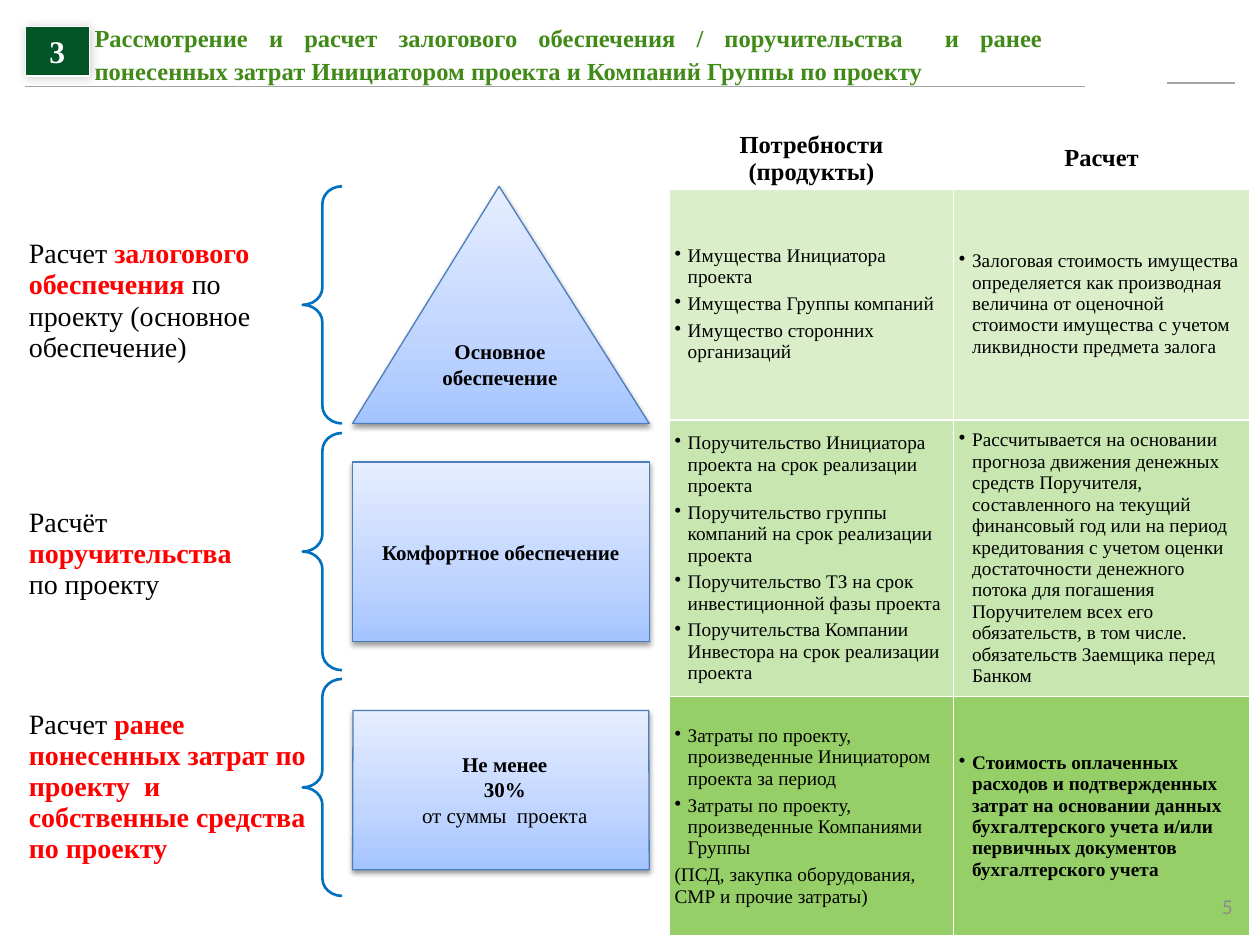
from copy import deepcopy

from pptx import Presentation
from pptx.dml.color import RGBColor
from pptx.enum.shapes import MSO_CONNECTOR, MSO_SHAPE
from pptx.enum.text import MSO_ANCHOR, MSO_AUTO_SIZE, PP_ALIGN
from pptx.oxml import parse_xml
from pptx.oxml.ns import nsdecls, qn
from pptx.oxml.xmlchemy import OxmlElement
from pptx.util import Pt

LEFT, CENTER, RIGHT, JUSTIFY = PP_ALIGN.LEFT, PP_ALIGN.CENTER, PP_ALIGN.RIGHT, PP_ALIGN.JUSTIFY
TOP, MIDDLE = MSO_ANCHOR.TOP, MSO_ANCHOR.MIDDLE
TRIANGLE, TRAPEZOID = MSO_SHAPE.ISOSCELES_TRIANGLE, MSO_SHAPE.TRAPEZOID
RECTANGLE, BRACE = MSO_SHAPE.RECTANGLE, MSO_SHAPE.LEFT_BRACE
STRAIGHT = MSO_CONNECTOR.STRAIGHT

COLORS = {
    "black": "000000", "white": "FFFFFF", "red": "FF0000", "title": "418A18",
    "badge": "005426", "rule": "A6A6A6", "brace": "0070C0", "outline": "4B7EBC",
    "number": "8C8C8C", "row1": "DAEECA", "row2": "C8E6B0", "row3": "96CE68",
}
GRADIENT = ((0, "A4C4FF"), (0.35, "BFD4FF"), (1, "E6EEFF"))
FONT = "Times New Roman"
CELL_MARGINS = (3, 0, 3, 0)
BULLET_INDENT = 7.5

TITLE = ("Рассмотрение и расчет залогового обеспечения / поручительства  и ранее "
         "понесенных затрат Инициатором проекта и Компаний Группы по проекту")
# A run wrapped in a tuple is emphasised
STAGES = [
    [["Расчет ", ("залогового обеспечения ",), "по проекту (основное обеспечение)"]],
    [["Расчёт"], [("поручительства",)], ["по проекту"]],
    [["Расчет ", ("ранее понесенных затрат по проекту  и собственные средства по проекту",)]],
]
HEADERS = ["Потребности (продукты)", "Расчет"]
NEEDS = [
    ["Имущества Инициатора проекта", "Имущества Группы компаний",
     "Имущество сторонних организаций"],
    ["Поручительство Инициатора проекта на срок реализации проекта",
     "Поручительство группы компаний на срок реализации проекта",
     "Поручительство ТЗ на срок инвестиционной фазы проекта",
     "Поручительства Компании Инвестора на срок реализации проекта"],
    ["Затраты по проекту, произведенные Инициатором проекта за период",
     "Затраты по проекту, произведенные Компаниями Группы",
     "(ПСД, закупка оборудования, СМР и прочие затраты)"],
]
CALCULATIONS = [
    "Залоговая стоимость имущества определяется как производная величина от оценочной "
    "стоимости имущества с учетом ликвидности предмета залога",
    "Рассчитывается на основании прогноза движения денежных средств Поручителя, "
    "составленного на текущий финансовый год или на период кредитования с учетом оценки "
    "достаточности денежного потока для погашения Поручителем всех его обязательств, "
    "в том числе. обязательств Заемщика перед Банком",
    "Стоимость оплаченных расходов и подтвержденных затрат на основании данных "
    "бухгалтерского учета и/или первичных документов бухгалтерского учета",
]


def rgb(name):
    return RGBColor.from_string(COLORS.get(name, name))


def points(*values):
    return [Pt(v) for v in values]


def set_margins(target, margins):
    for side, value in zip(("left", "top", "right", "bottom"), margins):
        setattr(target, f"margin_{side}", Pt(value))


def add_run(p, text, color="black", **fmt):
    r = p.add_run()
    r.text = text
    for name, value in {"name": FONT, "bold": False, **fmt}.items():
        setattr(r.font, name, value)
    r.font.color.rgb = rgb(color)


def next_paragraph(tf, first, align=LEFT):
    p = tf.paragraphs[0] if first else tf.add_paragraph()
    p.alignment = align
    return p


def set_indent(p, margin, bullet=False):
    pPr = p._p.get_or_add_pPr()
    pPr.set("marL", str(Pt(margin)))
    pPr.set("indent", str(Pt(-margin if bullet else 0)))
    if bullet:
        char = OxmlElement("a:buChar")
        char.set("char", "•")
        pPr.append(char)


def add_text(slide, box, align, anchor):
    tf = slide.shapes.add_textbox(*points(*box)).text_frame
    tf.word_wrap = True
    tf.vertical_anchor = anchor
    return tf, next_paragraph(tf, True, align)


def add_shadow(sp, blur, distance, angle, alpha):
    """Attach an outer black shadow; angle in degrees, alpha in percent."""
    sp._element.spPr.append(parse_xml(
        f'<a:effectLst {nsdecls("a")}><a:outerShdw blurRad="{Pt(blur)}" dist="{Pt(distance)}" '
        f'dir="{angle * 60000}" rotWithShape="0"><a:srgbClr val="{COLORS["black"]}">'
        f'<a:alpha val="{alpha * 1000}"/></a:srgbClr></a:outerShdw></a:effectLst>'))


def add_rule(slide, x1, x2, y):
    line = slide.shapes.add_connector(STRAIGHT, *points(x1, y, x2, y))
    line.line.color.rgb = rgb("rule")
    line.line.width = Pt(1)
    line._element.spPr.append(OxmlElement("a:effectLst"))


def add_header(slide, x, y):
    add_rule(slide, x, x + 605.5, y + 40.5)
    add_rule(slide, x + 652.5, x + 691, y + 38.5)

    title = slide.shapes.title
    title.left, title.top, title.width, title.height = points(x + 39.5, y, 542, 41.5)
    tf = title.text_frame
    tf.auto_size, tf.word_wrap, tf.vertical_anchor = MSO_AUTO_SIZE.NONE, True, MIDDLE
    set_margins(tf, (0, 0, 0, 0))
    p = next_paragraph(tf, True, JUSTIFY)
    p.line_spacing = 1.15
    add_run(p, TITLE, "title", size=Pt(14), bold=True)

    badge = slide.shapes.add_shape(RECTANGLE, *points(x, y + 6, 36.5, 28.5))
    badge.fill.solid()
    badge.fill.fore_color.rgb = rgb("badge")
    badge.line.color.rgb = rgb("white")
    badge.line.width = Pt(0.75)
    add_shadow(badge, 6, 1, 45, 20)
    p = next_paragraph(badge.text_frame, True, CENTER)
    add_run(p, "3", "white", size=Pt(18), bold=True)


def add_plain_table(slide, x, y, cols, rows):
    """Add a table without style banding and return it."""
    table = slide.shapes.add_table(
        len(rows), len(cols), *points(x, y, sum(cols), sum(rows))).table
    table.first_row = table.horz_banding = False
    for item, width in zip(table.columns, cols):
        item.width = Pt(width)
    for item, height in zip(table.rows, rows):
        item.height = Pt(height)
    for cell in table.iter_cells():
        cell.fill.background()
        cell.vertical_anchor = MIDDLE
        set_margins(cell, CELL_MARGINS)
    return table


def add_stages(slide, x, y):
    table = add_plain_table(slide, x, y, [178.5], [34.5, 139, 150, 116.5])
    for row, paragraphs in enumerate(STAGES, 1):
        tf = table.cell(row, 0).text_frame
        for i, runs in enumerate(paragraphs):
            p = next_paragraph(tf, i == 0)
            set_indent(p, BULLET_INDENT)
            for run in runs:
                strong = isinstance(run, tuple)
                add_run(p, run[0] if strong else run, "red" if strong else "black",
                        size=Pt(16), bold=strong)


def set_borders(cell, bottom):
    tcPr = cell._tc.get_or_add_tcPr()
    for i, (tag, width) in enumerate((("lnL", 1), ("lnR", 1), ("lnT", 1), ("lnB", bottom))):
        tcPr.insert(i, parse_xml(
            f'<a:{tag} {nsdecls("a")} w="{Pt(width)}"><a:solidFill>'
            f'<a:srgbClr val="{COLORS["white"]}"/></a:solidFill></a:{tag}>'))


def add_requirements(slide, x, y):
    table = add_plain_table(slide, x, y, [162.5, 169], [34, 132.5, 158, 137])
    for col, text in enumerate(HEADERS):
        cell = table.cell(0, col)
        set_borders(cell, 3)
        add_run(next_paragraph(cell.text_frame, True, CENTER), text, size=Pt(14), bold=True)
    for row, (needs, calculation) in enumerate(zip(NEEDS, CALCULATIONS), 1):
        for col, items in enumerate((needs, [calculation])):
            cell = table.cell(row, col)
            cell.fill.solid()
            cell.fill.fore_color.rgb = rgb(f"row{row}")
            cell.margin_right = Pt(6)
            set_borders(cell, 1)
            for i, text in enumerate(items):
                p = next_paragraph(cell.text_frame, i == 0)
                if not text.startswith("("):
                    set_indent(p, BULLET_INDENT, bullet=True)
                if i:
                    p.space_before = Pt(3)
                add_run(p, text, size=Pt(11), bold=row == 3 and col == 1)


def add_block(slide, kind, box, adjustment, text=None):
    sp = slide.shapes.add_shape(kind, *points(*box))
    sp.adjustments[0] = adjustment
    sp.fill.gradient()
    sp.fill.gradient_angle = 90
    gs = sp._element.spPr.find(".//" + qn("a:gs"))
    gs.addnext(deepcopy(gs))
    for stop, (position, color) in zip(sp.fill.gradient_stops, GRADIENT):
        stop.position, stop.color.rgb = position, rgb(color)
    sp.line.color.rgb = rgb("outline")
    sp.line.width = Pt(0.75)
    add_shadow(sp, 3.1, 1.6, 90, 38)
    if text:
        sp.text_frame.vertical_anchor = MIDDLE
        add_run(next_paragraph(sp.text_frame, True, CENTER), text, size=Pt(12), bold=True)


def add_pyramid(slide, x, y):
    block_x, width = x + 28.5, 169.5
    add_block(slide, TRIANGLE, (block_x, y, width, 135.5), 0.494, "Основное обеспечение")
    add_block(slide, TRAPEZOID, (block_x, y + 157.5, width, 102.5), 0, "Комфортное обеспечение")
    add_block(slide, TRAPEZOID, (block_x, y + 299.5, width, 91), 0.003)
    tf, p = add_text(slide, (block_x + 30.5, y + 319.5, 113, 51), CENTER, TOP)
    for i, text in enumerate(("Не менее", "30%", "от суммы  проекта")):
        add_run(next_paragraph(tf, i == 0, CENTER), text, size=Pt(12), bold=i < 2)

    for offset, height in ((0, 135.5), (141, 135.5), (281.5, 124)):
        brace = slide.shapes.add_shape(BRACE, *points(x, y + offset, 22.5, height))
        brace.adjustments[0], brace.adjustments[1] = 0.443, 0.5
        brace.shadow.inherit = False
        brace.fill.background()
        brace.line.color.rgb = rgb("brace")
        brace.line.width = Pt(1.5)


def add_page_number(slide, box):
    tf, p = add_text(slide, box, RIGHT, MIDDLE)
    add_run(p, "5", "number", name="Calibri", size=Pt(12))


def main():
    prs = Presentation()
    prs.slide_width, prs.slide_height = points(720, 540)
    slide = prs.slides.add_slide(prs.slide_layouts[5])
    add_header(slide, 14.5, 9)
    add_stages(slide, 6, 68)
    add_requirements(slide, 382.5, 73.5)
    add_pyramid(slide, 173, 106.5)
    add_page_number(slide, (670.5, 507, 41, 21))
    prs.save("out.pptx")


if __name__ == "__main__":
    main()
